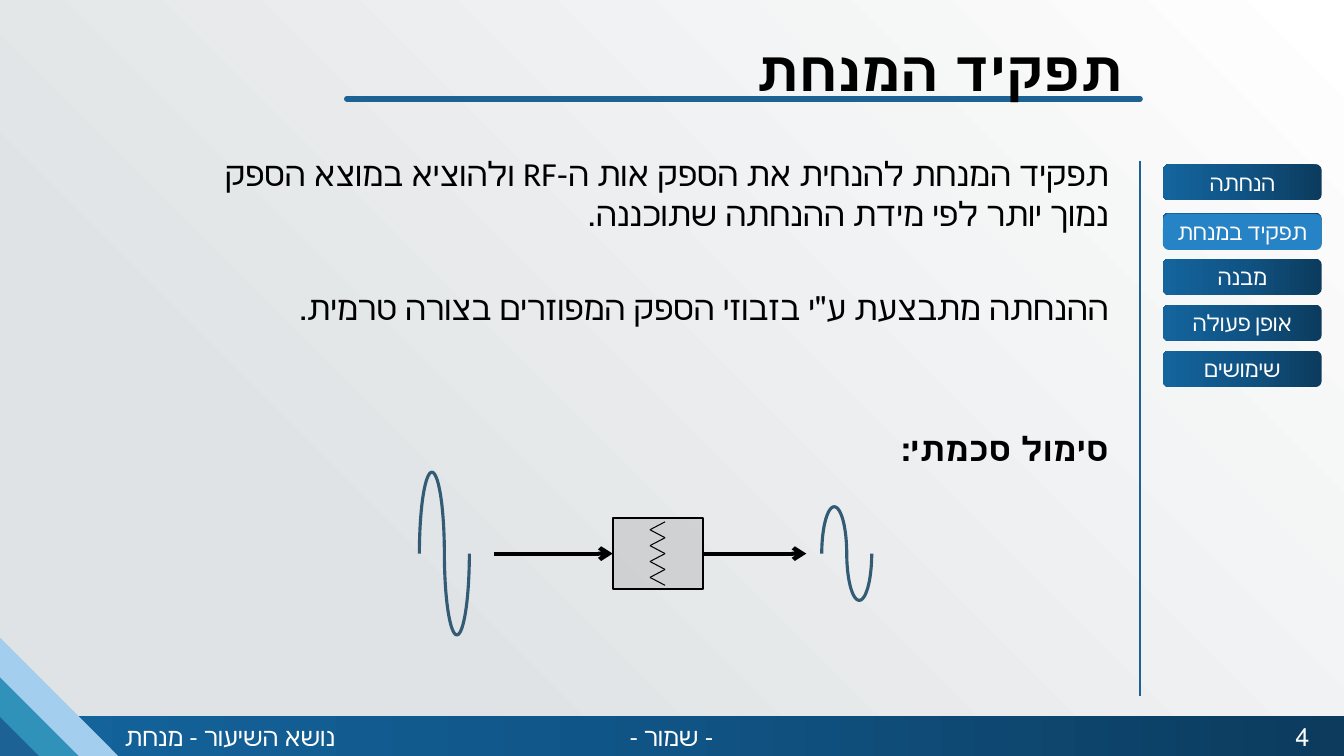
import math
import pptx
import pptx.util
import pptx.dml.color
import pptx.enum.shapes
import pptx.enum.text
import pptx.oxml
import pptx.oxml.ns

Cm = pptx.util.Cm
Pt = pptx.util.Pt
qn = pptx.oxml.ns.qn
KIND = pptx.enum.shapes.MSO_SHAPE
ALIGN = pptx.enum.text.PP_ALIGN
ANCHOR = pptx.enum.text.MSO_ANCHOR
STRAIGHT = pptx.enum.shapes.MSO_CONNECTOR.STRAIGHT

# Content (lengths in cm)
WIDE, HIGH = 33.87, 19.05
TITLE = "תפקיד המנחת"
BODY = [  # text, bold, space before in points
    ("תפקיד המנחת להנחית את הספק אות ה-RF ולהוציא במוצא הספק נמוך יותר "
     "לפי מידת ההנחתה שתוכננה.", False, 0),
    ("ההנחתה מתבצעת ע\"י בזבוזי הספק המפוזרים בצורה טרמית.", False, 38),
    ("סימול סכמתי:", True, 72),
]
TABS = [  # text, top
    ("הנחתה", 4.14), ("תפקיד במנחת", 5.36), ("מבנה", 6.52),
    ("אופן פעולה", 7.68), ("שימושים", 8.84),
]
ACTIVE = ("תפקיד במנחת", 5.39)
FOOT = [  # text, left, width, alignment
    ("נושא השיעור - מנחת", 2.9, 9.27, ALIGN.LEFT),
    ("- שמור -", 14.8, 4.24, ALIGN.CENTER),
    ("4", 31.78, 2.08, ALIGN.CENTER),
]
CORNER = [(3, "A3CEED", 100), (2, "1482AC", 80), (1, "1D6295", 100)]
WAVES = [(10.57, 2.05), (20.71, 1.18)]  # left, height of the peak
PAPER = [(0, "FFFFFF"), (75, "DFE3E5")]
NAVY = [(0, "0C3B5D"), (50, "105485"), (100, "14649D")]

deck = pptx.Presentation()
deck.slide_width, deck.slide_height = Cm(WIDE), Cm(HIGH)
slide = deck.slides.add_slide(deck.slide_layouts[6])


def paint(fill, code):
    fill.solid()
    fill.fore_color.rgb = pptx.dml.color.RGBColor.from_string(code)


def blend(fill, root, stops, angle):
    fill.gradient()
    grad = root.find(".//" + qn("a:gradFill"))
    row = grad.find(qn("a:gsLst"))
    for old in list(row):
        row.remove(old)
    for pos, code in stops:
        row.append(pptx.oxml.parse_xml(
            f'<a:gs {pptx.oxml.ns.nsdecls("a")} pos="{pos * 1000}">'
            f'<a:srgbClr val="{code}"/></a:gs>'))
    grad.find(qn("a:lin")).set("ang", str(angle * 60000))


def block(home, kind, left, top, width, height, fill, alpha=100):
    shape = home.add_shape(kind, Cm(left), Cm(top), Cm(width), Cm(height))
    shape.shadow.inherit = False
    shape.line.fill.background()
    if isinstance(fill, list):
        blend(shape.fill, shape.element, fill, 180)
    else:
        paint(shape.fill, fill)
    if alpha < 100:
        tone = shape.element.spPr.find(".//" + qn("a:srgbClr"))
        tone.append(tone.makeelement(qn("a:alpha"), {"val": str(alpha * 1000)}))
    return shape


def stroke(line, code, width):
    paint(line.fill, code)
    line.width = Pt(width)


def link(home, x1, y1, x2, y2, code, width, arrow=False):
    line = home.add_connector(STRAIGHT, Cm(x1), Cm(y1), Cm(x2), Cm(y2))
    stroke(line.line, code, width)
    props = line.element.spPr
    if arrow:
        edge = props.find(qn("a:ln"))
        edge.append(edge.makeelement(qn("a:tailEnd"), {"type": "arrow"}))
    props.append(props.makeelement(qn("a:effectLst"), {}))
    return line


def write(frame, text, size=24, font="Calibri", code="000000", bold=False,
          align=ALIGN.RIGHT, before=0, first=True, script=None):
    para = frame.paragraphs[0] if first else frame.add_paragraph()
    para.alignment = align
    para._p.get_or_add_pPr().set("rtl", "1")
    if before:
        para.space_before = Pt(before)
    run = para.add_run()
    run.text = text
    run.font.size, run.font.bold, run.font.name = Pt(size), bold, font
    paint(run.font.fill, code)
    if script:
        props = run.font._element
        props.append(props.makeelement(qn("a:cs"), {"typeface": script}))


def area(left, top, width, height):
    frame = slide.shapes.add_textbox(
        Cm(left), Cm(top), Cm(width), Cm(height)).text_frame
    frame.word_wrap = True
    return frame


def button(text, top, fill):
    shape = block(slide.shapes, KIND.ROUNDED_RECTANGLE,
                  29.31, top, 4, 0.91, fill)
    shape.text_frame.vertical_anchor = ANCHOR.MIDDLE
    write(shape.text_frame, text, size=16, code="FFFFFF",
          align=ALIGN.CENTER, script="Calibri")


# Background, footer bar and corner
blend(slide.background.fill, slide.element, PAPER, 135)
block(slide.shapes, KIND.RECTANGLE, 0, 18.05, WIDE, 1, NAVY)
for size, code, alpha in CORNER:
    block(slide.shapes, KIND.RIGHT_TRIANGLE, 0, HIGH + 0.02 - size,
          size, size, code, alpha)
for text, left, width, align in FOOT:
    write(area(left, 18.06, width, 1.02), text, size=18, font="Lato",
          code="FFFFFF", align=align)

# Rules
link(slide.shapes, 28.73, 4.05, 28.73, 17.55, "1D6295", 1.5)
rule = link(slide.shapes, 28.73, 2.49, 8.74, 2.49, "1D6294", 4)
rule.element.spPr.find(qn("a:ln")).set("cap", "rnd")

# Side tabs
for text, top in TABS:
    button(text, top, NAVY)

# Title and body, then the active tab on top
write(area(5.69, 0.76, 22.86, 3.18), TITLE, size=40, bold=True)
body = area(5.33, 3.73, 22.86, 4.19)
for i, (text, bold, before) in enumerate(BODY):
    write(body, text, bold=bold, before=before, first=i == 0)
button(*ACTIVE, "2683C6")

# Attenuator symbol
MID = 13.95
parts = slide.shapes.add_group_shape().shapes
box = block(parts, KIND.RECTANGLE, 15.44, MID - 0.9, 2.28, 1.8, "C0C0C0", 57)
stroke(box.line, "000000", 1.5)
link(parts, 12.45, MID, 15.44, MID, "000000", 3, True).end_connect(box, 1)
link(parts, 17.72, MID, 20.32, MID, "000000", 3, True).begin_connect(box, 3)

# Waves: an upper and a lower half ellipse
HALF, STEPS = 0.63, 34
for left, peak in WAVES:
    dots = []
    for turn, sign in ((0, 1), (1, -1)):
        for i in range(STEPS + 1):
            angle = math.pi * i / STEPS
            x = left + HALF * (turn + (1 - math.cos(angle)) / 2)
            dots.append((Cm(x), Cm(MID - sign * peak * math.sin(angle))))
    form = parts.build_freeform(*dots[0])
    form.add_line_segments(dots[1:], close=False)
    wave = form.convert_to_shape()
    wave.shadow.inherit = False
    wave.fill.background()
    stroke(wave.line, "335B74", 2.25)

# Resistor zigzag
zig = [((16.76, 16.38)[i % 2], MID - 0.8 + 0.2 * i) for i in range(9)]
for start, end in zip(zig, zig[1:]):
    link(parts, *start, *end, "000000", 0.75)

deck.save("out.pptx")
